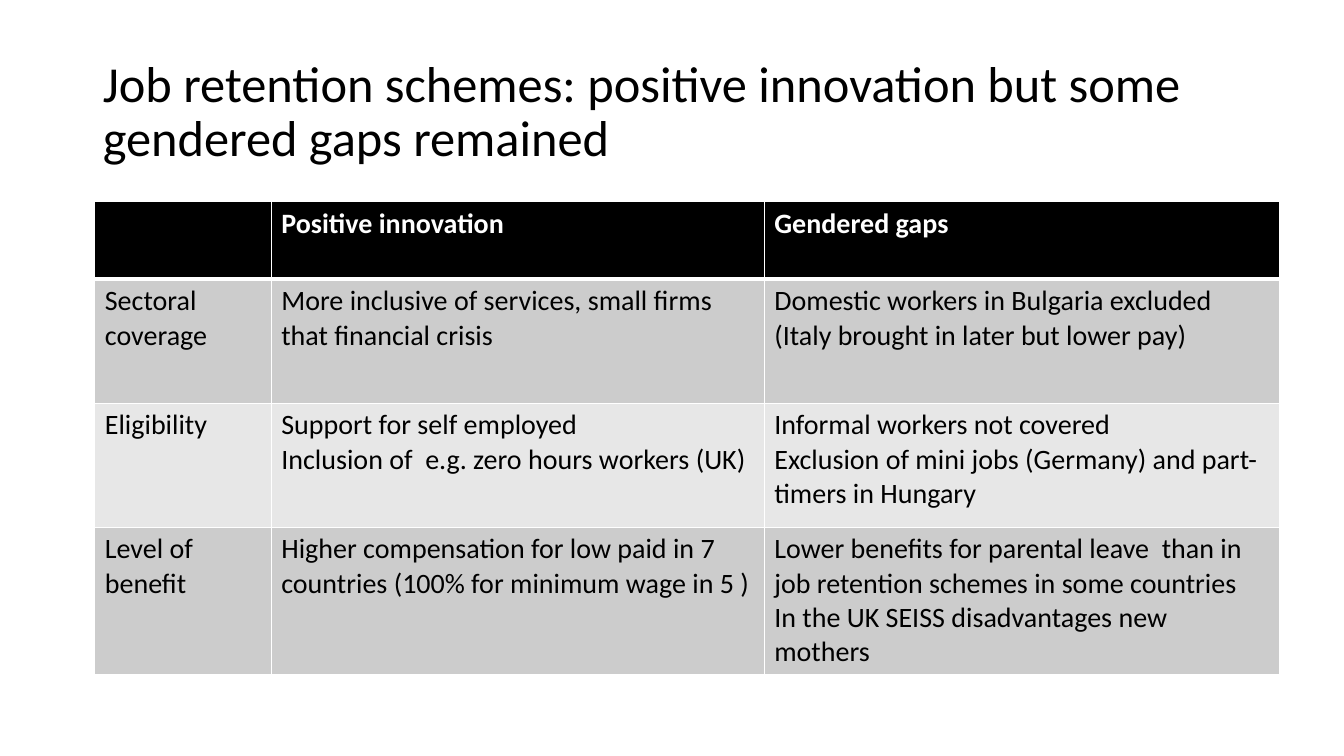
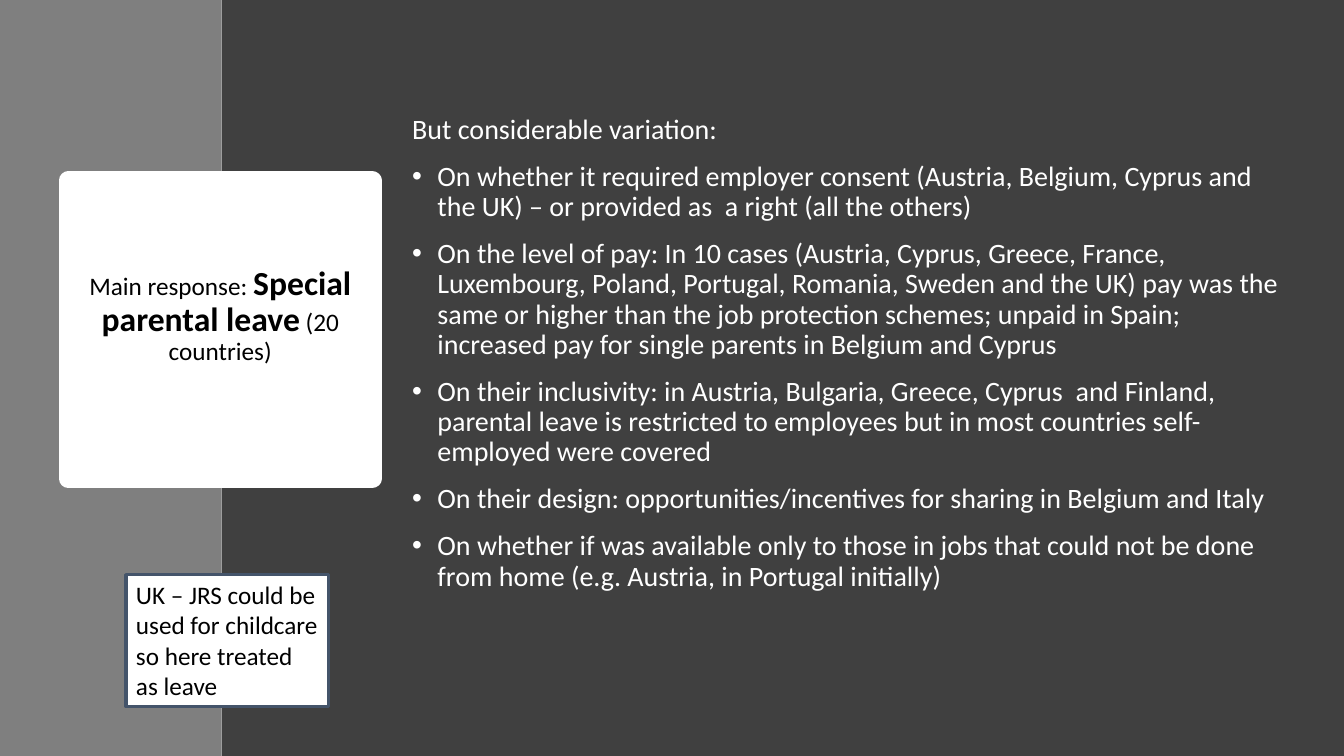
from dataclasses import dataclass
from itertools import product

from lxml import etree
from pptx import Presentation, util as u
from pptx.dml.color import RGBColor
from pptx.enum import shapes, text
from pptx.oxml import ns

FONT = "Calibri"
BLACK = RGBColor(0x00, 0x00, 0x00)
WHITE = RGBColor(0xFF, 0xFF, 0xFF)
DARK_GREY = RGBColor(0x40, 0x40, 0x40)
MID_GREY = RGBColor(0x7F, 0x7F, 0x7F)
ROW_GREY = RGBColor(0xCC, 0xCC, 0xCC)
ROW_LIGHT = RGBColor(0xE7, 0xE7, 0xE7)
NOTE_BLUE = RGBColor(0x44, 0x54, 0x6A)

TITLE_ONLY = 5
LINE_SPACING = 0.9
SLIDE_WIDTH, SLIDE_HEIGHT = 13.33, 7.5
BAND_EDGE = 2.2


@dataclass(frozen=True)
class Box:
    left: float
    top: float
    width: float
    height: float

    def lengths(self) -> tuple:
        return tuple(map(u.Inches, (self.left, self.top, self.width, self.height)))


@dataclass(frozen=True)
class Panel:
    box: Box
    fill: RGBColor
    line: RGBColor | None = None
    line_width: float = 0


@dataclass(frozen=True)
class Phrase:
    words: str
    size: float
    bold: bool = False


BANDS = (
    Panel(Box(0, 0, BAND_EDGE, SLIDE_HEIGHT), MID_GREY),
    Panel(Box(BAND_EDGE, 0, SLIDE_WIDTH - BAND_EDGE, SLIDE_HEIGHT), DARK_GREY),
)
TITLE_CARD = Panel(Box(0.68, 1.79, 3.01, 2.96), WHITE, WHITE, 13.75)
NOTE_CARD = Panel(Box(1.25, 5.7, 2.01, 1.31), WHITE, NOTE_BLUE, 2.25)

SCHEMES_TITLE = (
    Phrase("Job retention schemes: positive innovation but some gendered gaps remained", 36),
)
LEAVE_TITLE = (
    Phrase("Main response: ", 18),
    Phrase("Special parental leave", 24, True),
    Phrase(" (20 countries)", 18),
)

COLUMN_WIDTHS = (1.75, 4.89, 5.11)
ROW_HEIGHTS = (0.77, 1.23, 1.23, 1.46)
TABLE_BOX = Box(0.94, 2, sum(COLUMN_WIDTHS), sum(ROW_HEIGHTS))
SCHEMES = (
    ("", "Positive innovation", "Gendered gaps"),
    (
        "Sectoral coverage",
        "More inclusive of services, small firms that financial crisis",
        "Domestic workers in Bulgaria excluded (Italy brought in later but lower pay)",
    ),
    (
        "Eligibility",
        "Support for self employed\nInclusion of  e.g. zero hours workers (UK)",
        "Informal workers not covered\n"
        "Exclusion of mini jobs (Germany) and part-timers in Hungary",
    ),
    (
        "Level of benefit",
        "Higher compensation for low paid in 7 countries (100% for minimum wage in 5 )",
        "Lower benefits for parental leave  than in job retention schemes in some countries\n"
        "In the UK SEISS disadvantages new mothers",
    ),
)

VARIATIONS = (
    "But considerable variation:",
    "On whether it required employer consent (Austria, Belgium, Cyprus and the UK) – "
    "or provided as  a right (all the others)",
    "On the level of pay: In 10 cases (Austria, Cyprus, Greece, France, Luxembourg, "
    "Poland, Portugal, Romania, Sweden and the UK) pay was the same or higher than the "
    "job protection schemes; unpaid in Spain; increased pay for single parents in "
    "Belgium and Cyprus",
    "On their inclusivity: in Austria, Bulgaria, Greece, Cyprus  and Finland, parental "
    "leave is restricted to employees but in most countries self-employed were covered",
    "On their design: opportunities/incentives for sharing in Belgium and Italy",
    "On whether if was available only to those in jobs that could not be done from home "
    "(e.g. Austria, in Portugal initially)",
)


def format_font(font, size: float, color: RGBColor, bold: bool = False) -> None:
    font.name = FONT
    font.size = u.Pt(size)
    font.bold = bold
    font.color.rgb = color


def format_frame(frame, size: float, color: RGBColor, bold: bool = False) -> None:
    for paragraph in frame.paragraphs:
        for run in paragraph.runs:
            format_font(run.font, size, color, bold)


def paint(shape, panel: Panel) -> None:
    shape.fill.solid()
    shape.fill.fore_color.rgb = panel.fill
    if panel.line is None:
        shape.line.fill.background()
    else:
        shape.line.color.rgb = panel.line
        shape.line.width = u.Pt(panel.line_width)


def add_panel(slide, panel: Panel):
    shape = slide.shapes.add_shape(shapes.MSO_SHAPE.RECTANGLE, *panel.box.lengths())
    shape.shadow.inherit = False
    paint(shape, panel)
    return shape


def set_title(slide, box: Box, phrases: tuple[Phrase, ...], alignment):
    title = slide.shapes.title
    title.left, title.top, title.width, title.height = box.lengths()
    frame = title.text_frame
    frame.word_wrap = True
    frame.auto_size = text.MSO_AUTO_SIZE.NONE
    frame.vertical_anchor = text.MSO_ANCHOR.MIDDLE
    paragraph = frame.paragraphs[0]
    paragraph.alignment = alignment
    paragraph.line_spacing = LINE_SPACING
    for phrase in phrases:
        run = paragraph.add_run()
        run.text = phrase.words
        format_font(run.font, phrase.size, BLACK, phrase.bold)
    return title


def set_borders(cell, bottom_width: float) -> None:
    """Draw white cell edges, 1 pt except at the bottom."""
    properties = cell._tc.get_or_add_tcPr()
    for index, side in enumerate("LRTB"):
        width = bottom_width if side == "B" else 1
        line = etree.Element(ns.qn(f"a:ln{side}"), w=str(u.Pt(width)))
        fill = etree.SubElement(line, ns.qn("a:solidFill"))
        etree.SubElement(fill, ns.qn("a:srgbClr"), val=str(WHITE))
        properties.insert(index, line)


def set_indent(paragraph, left: float, first: float, bullet: str = "") -> None:
    """Indent in inches, with a hanging bullet if one is given."""
    properties = paragraph._p.get_or_add_pPr()
    properties.set("marL", str(u.Inches(left)))
    properties.set("indent", str(u.Inches(first)))
    if bullet:
        etree.SubElement(properties, ns.qn("a:buFont"), typeface="Arial")
        etree.SubElement(properties, ns.qn("a:buChar"), char=bullet)


def add_schemes_table(slide) -> None:
    table = slide.shapes.add_table(
        len(ROW_HEIGHTS), len(COLUMN_WIDTHS), *TABLE_BOX.lengths()
    ).table
    for column, width in zip(table.columns, COLUMN_WIDTHS):
        column.width = u.Inches(width)
    for row, height in zip(table.rows, ROW_HEIGHTS):
        row.height = u.Inches(height)
    for i, j in product(range(len(ROW_HEIGHTS)), range(len(COLUMN_WIDTHS))):
        cell = table.cell(i, j)
        is_header = i == 0
        cell.text_frame.text = SCHEMES[i][j]
        format_frame(cell.text_frame, 20, WHITE if is_header else BLACK, is_header)
        cell.fill.solid()
        cell.fill.fore_color.rgb = BLACK if is_header else (ROW_LIGHT, ROW_GREY)[i % 2]
        set_borders(cell, 3 if is_header else 1)


def add_variations(slide) -> None:
    frame = slide.shapes.add_textbox(*Box(3.49, 0.35, 9.3, 6.6).lengths()).text_frame
    frame.word_wrap = True
    frame.vertical_anchor = text.MSO_ANCHOR.MIDDLE
    frame.margin_bottom = u.Inches(0.33)
    frame.text = "\n".join(VARIATIONS)
    format_frame(frame, 20, WHITE)
    for i, paragraph in enumerate(frame.paragraphs):
        paragraph.line_spacing = LINE_SPACING
        paragraph.space_before = u.Pt(12)
        if i == 0:
            set_indent(paragraph, 0.5, 0)
        else:
            set_indent(paragraph, 0.75, -0.25, "•")


def add_note(slide) -> None:
    note = add_panel(slide, NOTE_CARD)
    frame = note.text_frame
    frame.word_wrap = True
    frame.vertical_anchor = text.MSO_ANCHOR.TOP
    frame.text = "UK – JRS could be used for childcare so here treated as leave"
    frame.paragraphs[0].alignment = text.PP_ALIGN.LEFT
    format_frame(frame, 18, BLACK)


def build_schemes_slide(presentation) -> None:
    slide = presentation.slides.add_slide(presentation.slide_layouts[TITLE_ONLY])
    set_title(slide, Box(0.92, 0.4, 11.5, 1.45), SCHEMES_TITLE, text.PP_ALIGN.LEFT)
    add_schemes_table(slide)


def build_leave_slide(presentation) -> None:
    slide = presentation.slides.add_slide(presentation.slide_layouts[TITLE_ONLY])
    title = set_title(slide, TITLE_CARD.box, LEAVE_TITLE, text.PP_ALIGN.CENTER)
    title.text_frame.margin_bottom = u.Inches(0.32)
    paint(title, TITLE_CARD)
    for band in BANDS:
        title.element.addprevious(add_panel(slide, band).element)
    add_variations(slide)
    add_note(slide)


def main() -> None:
    presentation = Presentation()
    presentation.slide_width = u.Inches(SLIDE_WIDTH)
    presentation.slide_height = u.Inches(SLIDE_HEIGHT)
    build_schemes_slide(presentation)
    build_leave_slide(presentation)
    presentation.save("out.pptx")


if __name__ == "__main__":
    main()
